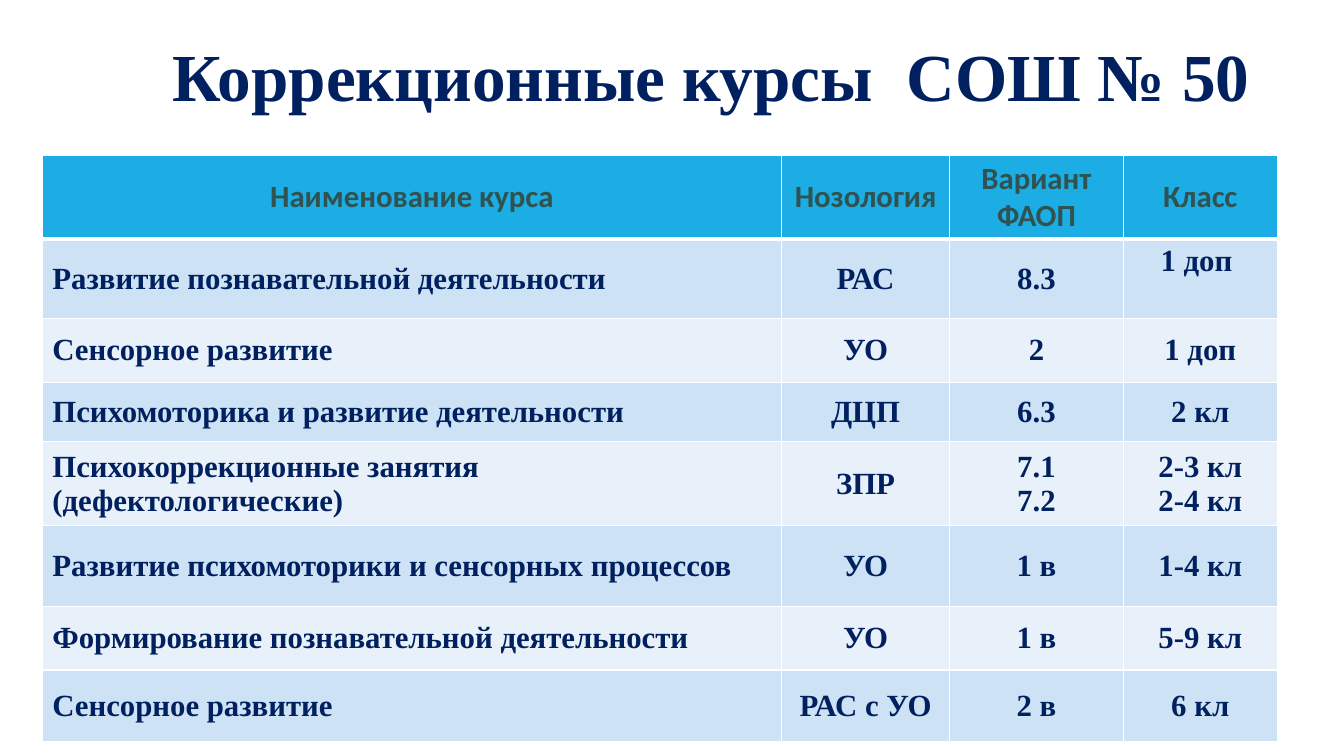
"""Build a slide with the table of remedial courses."""
from dataclasses import dataclass

from lxml import etree
from pptx import Presentation
from pptx.dml.color import RGBColor
from pptx.enum.text import MSO_ANCHOR, PP_ALIGN
from pptx.oxml.ns import qn
from pptx.util import Inches, Pt

LEFT, CENTER = PP_ALIGN.LEFT, PP_ALIGN.CENTER
TOP, MIDDLE = MSO_ANCHOR.TOP, MSO_ANCHOR.MIDDLE


@dataclass(frozen=True)
class Theme:
    """Colours, fonts and sizes of the slide."""
    navy: str = "002060"
    header_text: str = "305250"
    header_fill: str = "1CADE4"
    bands: tuple = ("CDE3F5", "E8F1FA")
    border: str = "FFFFFF"
    body_font: str = "Times New Roman"
    header_font: str = "Calibri"
    title_size: int = 48
    table_size: int = 22
    thin: int = 1
    thick: int = 3


THEME = Theme()
COLUMN_WIDTHS = (7.33, 1.67, 1.72, 1.53)
ROW_HEIGHTS = (0.83, 0.79, 0.63, 0.59, 0.83, 0.8, 0.63, 0.71)
HEADERS = ("Наименование курса", "Нозология", "Вариант ФАОП", "Класс")
COURSES = (
    ("Развитие познавательной деятельности", "РАС", "8.3", "1 доп "),
    ("Сенсорное развитие", "УО", "2", "1 доп"),
    ("Психомоторика и развитие деятельности", "ДЦП", "6.3", "2 кл"),
    ("Психокоррекционные занятия (дефектологические)", "ЗПР", "7.1\n7.2", "2-3 кл\n2-4 кл"),
    ("Развитие психомоторики и сенсорных процессов", "УО", "1 в", "1-4 кл"),
    ("Формирование познавательной деятельности", "УО", "1 в", "5-9 кл"),
    ("Сенсорное развитие", "РАС с УО", "2 в", "6 кл"),
)


def write_text(text_frame, text, font_name, size, color, alignment):
    """Write each line of the text as a bold paragraph."""
    for index, line in enumerate(text.split("\n")):
        paragraph = text_frame.add_paragraph() if index else text_frame.paragraphs[0]
        paragraph.alignment = alignment
        run = paragraph.add_run()
        run.text = line
        run.font.name = font_name
        run.font.size = Pt(size)
        run.font.bold = True
        run.font.color.rgb = RGBColor.from_string(color)


def add_title(slide, text):
    """Add the centred slide title."""
    shape = slide.shapes.add_textbox(Inches(1.4), Inches(0.07), Inches(11.31), Inches(1.45))
    text_frame = shape.text_frame
    text_frame.word_wrap = True
    text_frame.vertical_anchor = MIDDLE
    write_text(text_frame, text, THEME.body_font, THEME.title_size, THEME.navy, CENTER)
    text_frame.paragraphs[0].line_spacing = 0.9


def set_borders(cell, top, bottom):
    """Draw the four cell borders, with given top and bottom widths."""
    properties = cell._tc.get_or_add_tcPr()
    widths = {"a:lnL": THEME.thin, "a:lnR": THEME.thin, "a:lnT": top, "a:lnB": bottom}
    for tag, width in widths.items():
        line = etree.SubElement(properties, qn(tag), w=str(Pt(width)))
        fill = etree.SubElement(line, qn("a:solidFill"))
        etree.SubElement(fill, qn("a:srgbClr"), val=THEME.border)


def fill_cell(cell, text, row, column):
    """Style one cell by its row and column and write its text."""
    is_header = row == 0
    set_borders(cell, THEME.thick if row == 1 else THEME.thin,
                THEME.thick if is_header else THEME.thin)
    cell.fill.solid()
    fill = THEME.header_fill if is_header else THEME.bands[(row - 1) % 2]
    cell.fill.fore_color.rgb = RGBColor.from_string(fill)
    cell.vertical_anchor = MIDDLE
    write_text(cell.text_frame, text,
               THEME.header_font if is_header else THEME.body_font,
               THEME.table_size,
               THEME.header_text if is_header else THEME.navy,
               CENTER if is_header or column else LEFT)


def add_course_table(slide):
    """Add the table of courses."""
    rows = (HEADERS, *COURSES)
    shape = slide.shapes.add_table(len(rows), len(HEADERS), Inches(0.42), Inches(1.54),
                                   Inches(sum(COLUMN_WIDTHS)), Inches(sum(ROW_HEIGHTS)))
    table = shape.table
    table.horz_banding = False
    for column, width in zip(table.columns, COLUMN_WIDTHS):
        column.width = Inches(width)
    for table_row, height in zip(table.rows, ROW_HEIGHTS):
        table_row.height = Inches(height)
    for row, texts in enumerate(rows):
        for column, text in enumerate(texts):
            fill_cell(table.cell(row, column), text, row, column)
    table.cell(1, 3).vertical_anchor = TOP


def main():
    """Build and save the presentation."""
    presentation = Presentation()
    presentation.slide_width = Inches(13.33)
    presentation.slide_height = Inches(7.5)
    slide = presentation.slides.add_slide(presentation.slide_layouts[6])
    add_title(slide, "Коррекционные курсы  СОШ № 50")
    add_course_table(slide)
    presentation.save("out.pptx")


if __name__ == "__main__":
    main()
